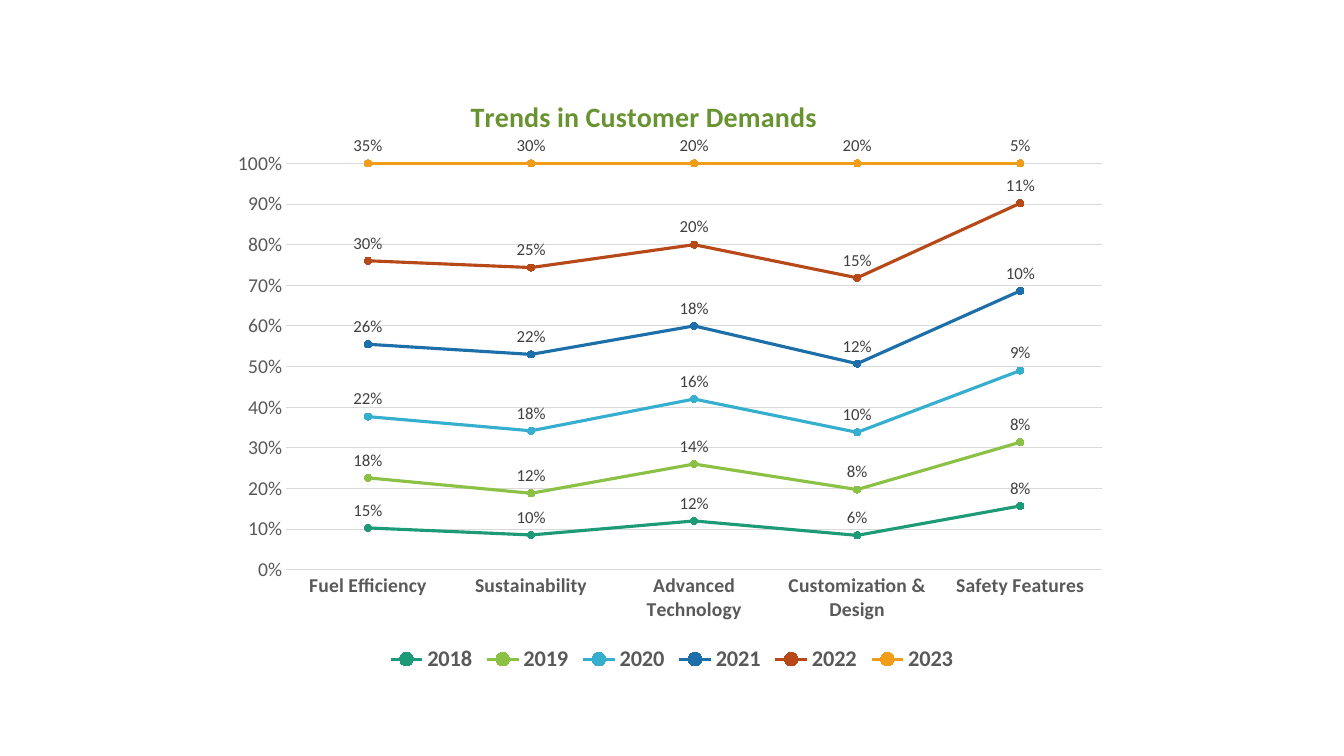
from lxml import etree
from pptx import Presentation
from pptx import util as u
from pptx.chart.data import CategoryChartData
from pptx.dml.color import RGBColor
from pptx.enum import chart as ec
from pptx.oxml.ns import qn

TOPICS = ["Fuel Efficiency", "Sustainability", "Advanced Technology",
          "Customization & Design", "Safety Features"]
YEARS = {
    "2018": ("1D9A78", [0.15, 0.10, 0.12, 0.06, 0.08]),
    "2019": ("8BC145", [0.18, 0.12, 0.14, 0.08, 0.08]),
    "2020": ("36AFCE", [0.22, 0.18, 0.16, 0.10, 0.09]),
    "2021": ("1D6FA9", [0.26, 0.22, 0.18, 0.12, 0.10]),
    "2022": ("B74919", [0.30, 0.25, 0.20, 0.15, 0.11]),
    "2023": ("F19D19", [0.35, 0.30, 0.20, 0.20, 0.05]),
}


def color(code):
    return RGBColor.from_string(code)


def style(font, size, code, bold=False):
    font.name = "Calibri"
    font.size = u.Pt(size)
    font.bold = bold
    font.color.rgb = color(code)


def write(frame, words, **form):
    run = frame.paragraphs[0].add_run()
    run.text = words
    style(run.font, **form)


def stroke(line, code, width):
    line.color.rgb = color(code)
    line.width = u.Pt(width)


def place(node, index, **parts):
    for old in node.findall(qn("c:layout")):
        node.remove(old)
    layout = etree.Element(qn("c:layout"))
    manual = etree.SubElement(layout, qn("c:manualLayout"))
    for tag, value in parts.items():
        etree.SubElement(manual, qn("c:" + tag)).set("val", str(value))
    node.insert(index, layout)


class Deck:
    gray = "595959"
    pale = "D9D9D9"
    dark = "404040"
    green = "699331"

    def __init__(self):
        self.show = Presentation()
        self.show.slide_width = u.Cm(33.87)
        self.show.slide_height = u.Cm(19.05)
        self.slide = self.show.slides.add_slide(self.show.slide_layouts[6])

    def chart(self, left, top, width, height):
        data = CategoryChartData(number_format="0%")
        data.categories = TOPICS
        for year, (_, values) in YEARS.items():
            data.add_series(year, values)
        frame = self.slide.shapes.add_chart(
            ec.XL_CHART_TYPE.LINE_MARKERS_STACKED_100,
            u.Cm(left), u.Cm(top), u.Cm(width), u.Cm(height), data)
        chart = frame.chart
        style(chart.font, 10, "000000")
        place(chart.plots[0]._element.getparent(), 0, layoutTarget="inner",
              xMode="edge", yMode="edge", x=0.07, y=0.14, w=0.91, h=0.68)
        return chart

    def title(self, chart, words):
        write(chart.chart_title.text_frame, words,
              size=20, code=self.green, bold=True)
        place(chart.chart_title._element, 1,
              xMode="edge", yMode="edge", x=0.27, y=0.02)

    def axes(self, chart):
        for axis in (chart.category_axis, chart.value_axis):
            axis.major_tick_mark = ec.XL_TICK_MARK.NONE
            axis.minor_tick_mark = ec.XL_TICK_MARK.NONE
        topic, share = chart.category_axis, chart.value_axis
        style(topic.tick_labels.font, 14, self.gray, True)
        stroke(topic.format.line, self.pale, 0.75)
        style(share.tick_labels.font, 14, self.gray)
        share.format.line.fill.background()
        stroke(share.major_gridlines.format.line, self.pale, 0.75)
        share.minimum_scale, share.maximum_scale = 0, 1
        share.major_unit = 0.1
        share.tick_labels.number_format = "0%"
        share.tick_labels.number_format_is_linked = False

    def lines(self, chart):
        for line in chart.plots[0].series:
            code = YEARS[line.name][0]
            line.smooth = False
            stroke(line.format.line, code, 2.25)
            mark = line.marker
            mark.style = ec.XL_MARKER_STYLE.CIRCLE
            mark.size = 5
            mark.format.fill.solid()
            mark.format.fill.fore_color.rgb = color(code)
            stroke(mark.format.line, code, 0.75)
            tags = line.data_labels
            tags.show_value = True
            tags.position = ec.XL_LABEL_POSITION.ABOVE
            tags.number_format = "0%"
            tags.number_format_is_linked = False
            style(tags.font, 12, self.dark)

    def legend(self, chart):
        chart.has_legend = True
        chart.legend.position = ec.XL_LEGEND_POSITION.BOTTOM
        chart.legend.include_in_layout = False
        style(chart.legend.font, 16, self.gray, True)


def main():
    deck = Deck()
    trends = deck.chart(5.64, 2.01, 22.58, 15.06)
    deck.title(trends, "Trends in Customer Demands")
    deck.axes(trends)
    deck.lines(trends)
    deck.legend(trends)
    deck.show.save("out.pptx")


if __name__ == "__main__":
    main()
